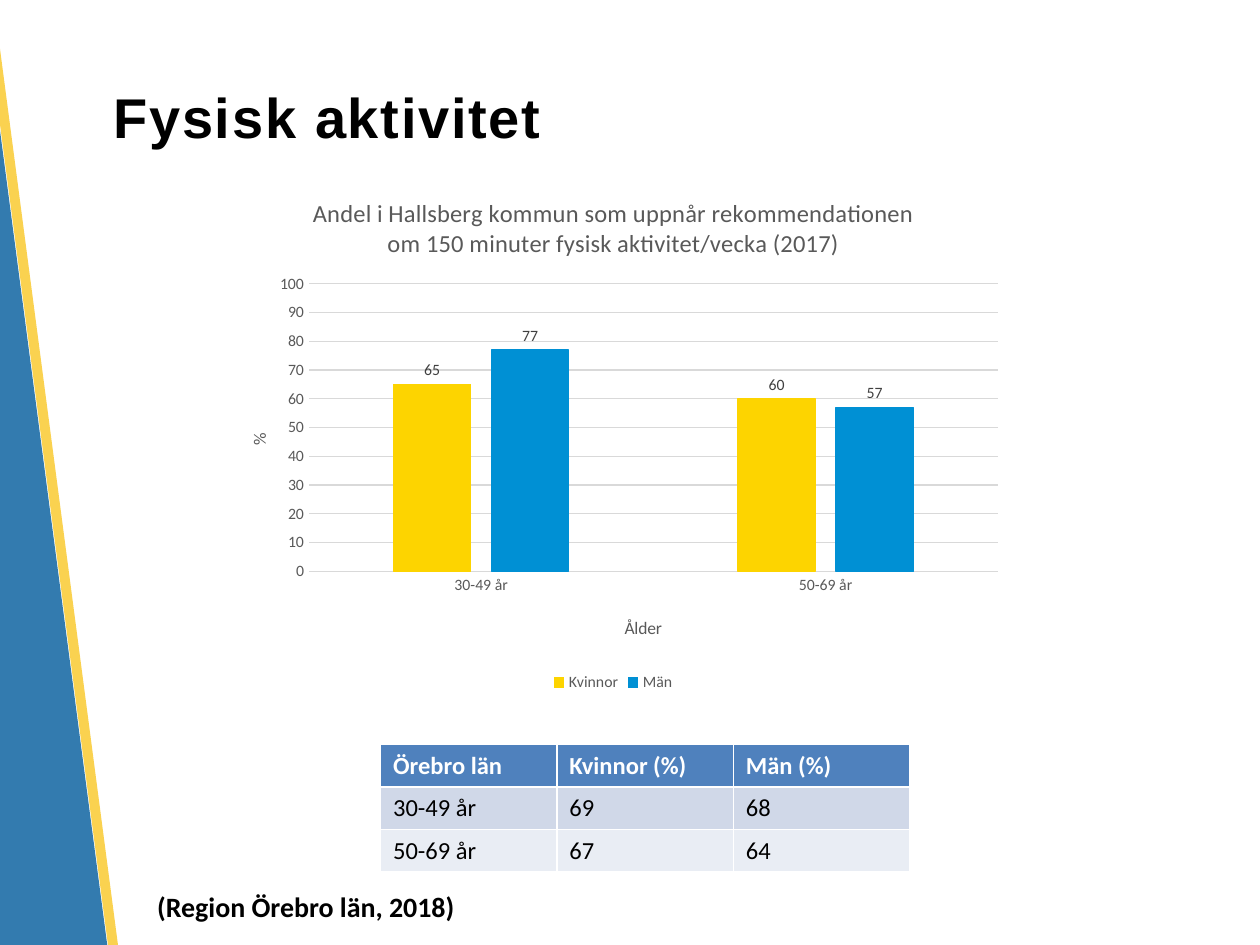
from lxml import etree
from pptx import Presentation
from pptx.chart.data import CategoryChartData
from pptx.dml.color import RGBColor
from pptx.enum.chart import XL_CHART_TYPE, XL_LABEL_POSITION, XL_LEGEND_POSITION, XL_TICK_MARK
from pptx.enum.shapes import MSO_SHAPE
from pptx.enum.text import MSO_ANCHOR, PP_ALIGN
from pptx.oxml.ns import qn
from pptx.util import Cm, Pt

COLORS = {
    "black": "000000", "white": "FFFFFF", "band blue": "005B9C", "band yellow": "FAC828",
    "women": "FDD400", "men": "0090D4", "grid": "D9D9D9", "axis": "595959",
    "label": "404040", "header": "4F81BD", "odd row": "D0D8E8", "even row": "E9EDF4",
}


def rgb(name):
    return RGBColor.from_string(COLORS[name])


def style_font(font, size, color, bold=False, name="Calibri"):
    font.name, font.size, font.bold = name, Pt(size), bold
    font.color.rgb = rgb(color)


def add_band(slide, box, color, opacity):
    """Add a slanted, translucent stripe at the left edge."""
    band = slide.shapes.add_shape(MSO_SHAPE.RECTANGLE, *map(Cm, box))
    band.rotation = 352.5
    band.shadow.inherit = False
    band.line.fill.background()
    band.fill.solid()
    band.fill.fore_color.rgb = rgb(color)
    color_element = band._element.spPr.find(qn("a:solidFill"))[0]
    etree.SubElement(color_element, qn("a:alpha"), val=str(opacity * 1000))


def format_title(slide, box):
    title = slide.shapes.title
    title.left, title.top, title.width, title.height = map(Cm, box)
    title.text_frame.text = "Fysisk aktivitet"
    title.text_frame.vertical_anchor = MSO_ANCHOR.MIDDLE
    paragraph = title.text_frame.paragraphs[0]
    paragraph.alignment = PP_ALIGN.LEFT
    run = paragraph.runs[0]
    style_font(run.font, 32, "black", True, "Arial")
    run.font._element.set("spc", "100")


def set_layout(element, **values):
    """Place a chart part by fractions of the chart area."""
    layout = element.find(qn("c:layout"))
    if layout is None:
        layout = etree.Element(qn("c:layout"))
        element.insert(0 if element.find(qn("c:tx")) is None else 1, layout)
    manual = etree.SubElement(layout, qn("c:manualLayout"))
    if "w" in values:
        etree.SubElement(manual, qn("c:layoutTarget"), val="inner")
    for key in ("x", "y"):
        etree.SubElement(manual, qn(f"c:{key}Mode"), val="edge")
    for key, value in values.items():
        etree.SubElement(manual, qn(f"c:{key}"), val=str(value))


def format_axis(axis, title, x, y):
    axis.major_tick_mark = axis.minor_tick_mark = XL_TICK_MARK.NONE
    style_font(axis.tick_labels.font, 9, "axis")
    axis.axis_title.text_frame.text = title
    style_font(axis.axis_title.text_frame.paragraphs[0].runs[0].font, 10, "axis")
    set_layout(axis.axis_title._element, x=x, y=y)


def draw_gray_line(line):
    line.color.rgb = rgb("grid")
    line.width = Pt(0.75)


def format_series(series, color):
    series.format.fill.solid()
    series.format.fill.fore_color.rgb = rgb(color)
    series.format.line.color.rgb = rgb(color)
    series.format.line.width = Pt(0.75)
    labels = series.data_labels
    labels.show_value = True
    labels.position = XL_LABEL_POSITION.OUTSIDE_END
    style_font(labels.font, 9, "label")


def add_activity_chart(slide, box):
    data = CategoryChartData()
    data.categories = ["30-49 år", "50-69 år"]
    data.add_series("Kvinnor", (65, 60))
    data.add_series("Män", (77, 57))
    chart = slide.shapes.add_chart(XL_CHART_TYPE.COLUMN_CLUSTERED, *map(Cm, box), data).chart
    style_font(chart.font, 10, "black")

    chart.has_title = True
    chart.chart_title.text_frame.text = (
        "Andel i Hallsberg kommun som uppnår rekommendationen "
        "om 150 minuter fysisk aktivitet/vecka (2017)"
    )
    style_font(chart.chart_title.text_frame.paragraphs[0].runs[0].font, 14, "axis")

    chart.has_legend = True
    chart.legend.position = XL_LEGEND_POSITION.BOTTOM
    chart.legend.include_in_layout = False
    style_font(chart.legend.font, 9, "axis")

    format_axis(chart.category_axis, "Ålder", 0.51, 0.84)
    draw_gray_line(chart.category_axis.format.line)
    value_axis = chart.value_axis
    format_axis(value_axis, "%", 0.04, 0.49)
    value_axis.minimum_scale, value_axis.maximum_scale, value_axis.major_unit = 0, 100, 10
    value_axis.format.line.fill.background()
    draw_gray_line(value_axis.major_gridlines.format.line)

    plot = chart.plots[0]
    plot.gap_width, plot.overlap = 219, -27
    plot.vary_by_categories = False
    for series, color in zip(plot.series, ("women", "men")):
        format_series(series, color)
    set_layout(chart._chartSpace.chart.plotArea, x=0.12, y=0.21, w=0.86, h=0.55)


def add_county_table(slide, box):
    rows = [
        ("Örebro län", "Kvinnor (%)", "Män (%)"),
        ("30-49 år", "69", "68"),
        ("50-69 år", "67", "64"),
    ]
    fills = ("header", "odd row", "even row")
    table = slide.shapes.add_table(len(rows), len(rows[0]), *map(Cm, box)).table
    for row_index, (texts, fill) in enumerate(zip(rows, fills)):
        is_header = row_index == 0
        for column_index, text in enumerate(texts):
            cell = table.cell(row_index, column_index)
            cell.fill.solid()
            cell.fill.fore_color.rgb = rgb(fill)
            cell.text_frame.text = text
            style_font(cell.text_frame.paragraphs[0].runs[0].font, 14,
                       "white" if is_header else "black", is_header)


def add_source_note(slide, box):
    text_frame = slide.shapes.add_textbox(*map(Cm, box)).text_frame
    text_frame.word_wrap = True
    text_frame.text = "(Region Örebro län, 2018)"
    style_font(text_frame.paragraphs[0].runs[0].font, 16, "black", True)


def main():
    presentation = Presentation()
    presentation.slide_width, presentation.slide_height = Cm(25.4), Cm(19.05)
    slide = presentation.slides.add_slide(presentation.slide_layouts[5])
    add_band(slide, (-1.32, -4.17, 2.31, 28.78), "band blue", 80)
    add_band(slide, (0.97, -4.5, 0.2, 28.75), "band yellow", 81)
    format_title(slide, (2.03, 0.76, 21.97, 3.18))
    add_county_table(slide, (7.67, 15.01, 10.67, 2.57))
    add_source_note(slide, (2.92, 17.81, 6.91, 0.94))
    add_activity_chart(slide, (4.29, 3.51, 16.15, 10.54))
    presentation.save("out.pptx")


if __name__ == "__main__":
    main()
